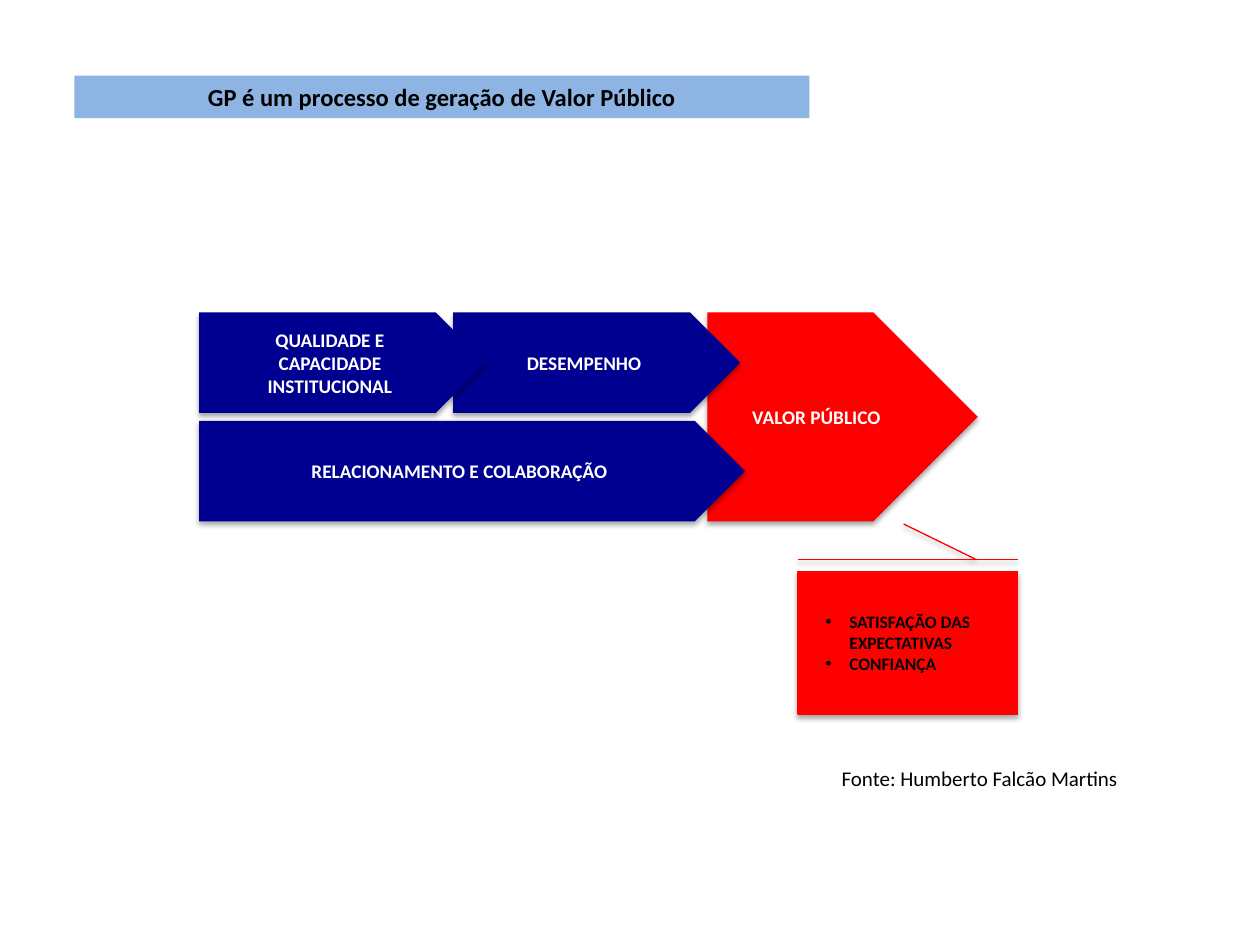
from lxml import etree
from pptx import Presentation
from pptx.dml.color import RGBColor
from pptx.enum.shapes import MSO_SHAPE
from pptx.enum.text import MSO_ANCHOR, MSO_AUTO_SIZE, PP_ALIGN
from pptx.oxml.ns import qn
from pptx.util import Pt

ARROW = MSO_SHAPE.PENTAGON
RECT = MSO_SHAPE.RECTANGLE
CALLOUT = MSO_SHAPE.LINE_CALLOUT_1_BORDER_AND_ACCENT_BAR
MIDDLE, TOP = MSO_ANCHOR.MIDDLE, MSO_ANCHOR.TOP
GROW = MSO_AUTO_SIZE.SHAPE_TO_FIT_TEXT
LEFT, CENTER, RIGHT = PP_ALIGN.LEFT, PP_ALIGN.CENTER, PP_ALIGN.RIGHT

WHITE = RGBColor(0xFF, 0xFF, 0xFF)
BLACK = RGBColor(0, 0, 0)
NAVY = RGBColor(0, 0, 0x90)
RED = RGBColor(0xFF, 0, 0)
SKY = RGBColor(0x8E, 0xB4, 0xE3)


def set_all(item, values):
    for name, value in values.items():
        setattr(item, name, value)


def write(shape, lines, align, size, color, bold=True, bullet=False, **frame):
    """Fill a shape with one paragraph per line; frame holds text frame values."""
    text = shape.text_frame
    set_all(text, frame)
    for i, line in enumerate(lines):
        para = text.add_paragraph() if i else text.paragraphs[0]
        para.alignment = align
        if bullet:
            props = para._p.get_or_add_pPr()
            props.set("marL", str(Pt(13.5)))
            props.set("indent", str(-Pt(13.5)))
            font = etree.SubElement(props, qn("a:buFont"))
            font.set("typeface", "Arial")
            etree.SubElement(props, qn("a:buChar")).set("char", "•")
        run = para.add_run()
        run.text = line
        set_all(run.font, {"name": "Calibri", "size": Pt(size), "bold": bold})
        run.font.color.rgb = color


def add_block(slide, kind, box, fill):
    shape = slide.shapes.add_shape(kind, *map(Pt, box))
    shape.fill.solid()
    shape.fill.fore_color.rgb = fill
    shape.line.fill.background()
    shape.shadow.inherit = False
    return shape


def add_shadow(shape):
    effects = shape._element.spPr.find(qn("a:effectLst"))
    outer = etree.SubElement(effects, qn("a:outerShdw"))
    values = {"blurRad": Pt(3.1), "dist": Pt(1.8), "dir": 90 * 60000,
              "rotWithShape": 0}
    for name, value in values.items():
        outer.set(name, str(int(value)))
    color = etree.SubElement(outer, qn("a:srgbClr"))
    color.set("val", str(BLACK))
    etree.SubElement(color, qn("a:alpha")).set("val", "35000")


def add_title(slide, box):
    bar = add_block(slide, RECT, box, SKY)
    write(bar, ["GP é um processo de geração de Valor Público"], CENTER, 14,
          BLACK, word_wrap=True, vertical_anchor=TOP, auto_size=GROW)


def add_chain(slide, box):
    """Two rows of navy arrows that lead into one tall red arrow."""
    left, top, width, height = box
    gap, step, long = 4.5, 145.25, 164
    row = (height - gap) / 2
    last = 2 * step
    arrows = [
        (last, 0, width - last, height, RED, ["VALOR PÚBLICO"]),
        (step, 0, long, row, NAVY, ["DESEMPENHO"]),
        (0, row + gap, 312, row, NAVY, ["RELACIONAMENTO E COLABORAÇÃO"]),
        (0, 0, long, row, NAVY,
         ["QUALIDADE E", "CAPACIDADE", "INSTITUCIONAL"]),
    ]
    for x, y, w, h, fill, lines in arrows:
        arrow = add_block(slide, ARROW, (left + x, top + y, w, h), fill)
        add_shadow(arrow)
        write(arrow, lines, CENTER, 11, WHITE, word_wrap=False,
              vertical_anchor=MIDDLE)


def add_callout(slide, box):
    """Place a callout, turned by 90 degrees, so that it covers the box."""
    left, top, width, height = box
    shift = (width - height) / 2
    note = add_block(slide, CALLOUT,
                     (left + shift, top - shift, height, width), RED)
    note.rotation = 90
    for i, value in enumerate((0.188, -0.083, 0.519, -0.332)):
        note.adjustments[i] = value
    note.line.color.rgb = RED
    note.line.width = Pt(0.75)
    add_shadow(note)
    write(note, ["SATISFAÇÃO DAS EXPECTATIVAS", "CONFIANÇA"], LEFT, 10, BLACK,
          bullet=True, word_wrap=True, vertical_anchor=MIDDLE,
          margin_bottom=Pt(15.8))
    note.text_frame._txBody.bodyPr.set("vert", "vert270")


def add_source(slide, box):
    label = slide.shapes.add_textbox(*map(Pt, box))
    write(label, ["Fonte: Humberto Falcão Martins"], RIGHT, 12, BLACK,
          bold=False, word_wrap=False, auto_size=GROW)


def main():
    deck = Presentation()
    set_all(deck, {"slide_width": Pt(720), "slide_height": Pt(540)})
    slide = deck.slides.add_slide(deck.slide_layouts[6])
    add_chain(slide, (113.75, 178.5, 445, 119.5))
    add_callout(slide, (456, 326.5, 125.5, 81.5))
    add_title(slide, (42.5, 43.25, 420, 24.25))
    add_source(slide, (471.5, 434, 174.25, 21.75))
    deck.save("out.pptx")


if __name__ == "__main__":
    main()
